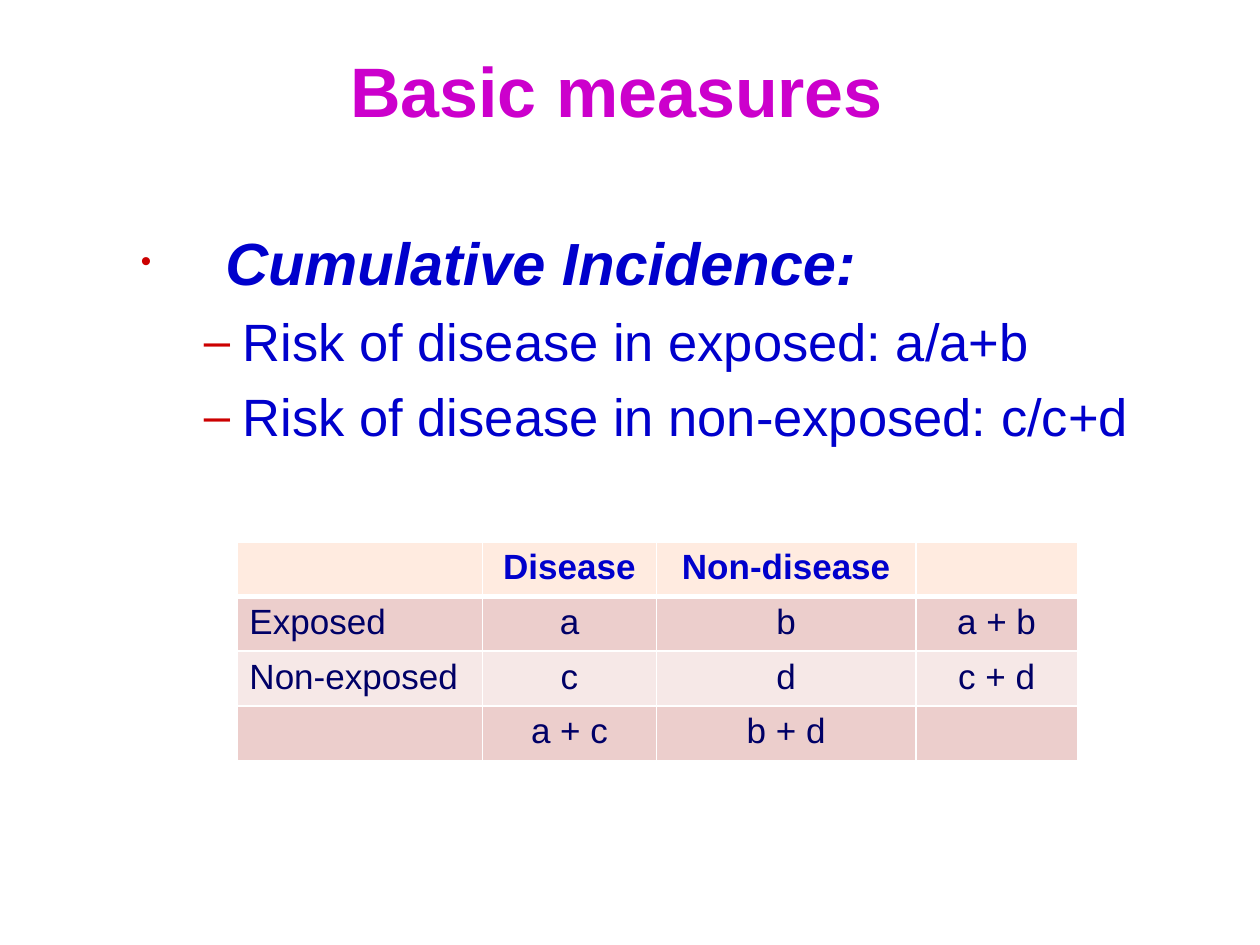
from lxml.etree import SubElement
from pptx import Presentation
from pptx.dml.color import RGBColor
from pptx.enum.text import MSO_ANCHOR, PP_ALIGN
from pptx.oxml.ns import qn
from pptx.util import Inches, Pt


def style(para, size, color, bold=False, italic=False):
    for run in para.runs:
        font = run.font
        font.name, font.size = "Arial", Pt(size)
        font.bold, font.italic = bold, italic
        font.color.rgb = RGBColor.from_string(color)


def add_node(parent, tag, **attrs):
    return SubElement(parent, qn(tag), {k: str(v) for k, v in attrs.items()})


deck = Presentation()
deck.slide_width, deck.slide_height = Inches(10), Inches(7.5)
slide = deck.slides.add_slide(deck.slide_layouts[6])
shapes = slide.shapes

# Title: the closing line break lifts the words above the middle
box = shapes.add_textbox(Inches(0.47), Inches(0.61), Inches(9), Inches(0.87))
frame = box.text_frame
frame.word_wrap = True
frame.vertical_anchor = MSO_ANCHOR.MIDDLE
frame.text = "Basic measures \v"
title = frame.paragraphs[0]
title.alignment = PP_ALIGN.CENTER
style(title, 40, "CC00CC", bold=True)
add_node(title._p, "a:endParaRPr", sz=4000)

# Bulleted list
box = shapes.add_textbox(Inches(1.02), Inches(1.69), Inches(8.47), Inches(5.19))
frame = box.text_frame
frame.word_wrap = True
frame.margin_top = Inches(0.1)
points = [
    ("Cumulative Incidence:", 0, 34),
    ("Risk of disease in exposed: a/a+b", 1, 30),
    ("Risk of disease in non-exposed: c/c+d", 1, 30),
]
levels = [("•", 50, 0.67, -0.67), ("–", 90, 0.81, -0.31)]
frame.text = "\n".join(text for text, _, _ in points)
for para, (_, level, size) in zip(frame.paragraphs, points):
    mark, scale, left, hang = levels[level]
    para.level = level
    props = para._p.get_or_add_pPr()
    props.set("marL", str(Inches(left)))
    props.set("indent", str(Inches(hang)))
    add_node(add_node(props, "a:buClr"), "a:srgbClr", val="CC0000")
    add_node(props, "a:buSzPct", val=scale * 1000)
    add_node(props, "a:buFont", typeface="Arial")
    add_node(props, "a:buChar", char=mark)
    if level:
        para.space_before = Pt(7)
    style(para, size, "0000CC", bold=not level, italic=not level)

# Two-by-two table with totals
rows = [
    ["", "Disease", "Non-disease", ""],
    ["Exposed", "a", "b", "a + b"],
    ["Non-exposed", "c", "d", "c + d"],
    ["", "a + c", "b + d", ""],
]
fills = ["FFEBE0", "ECCECC", "F6E8E7", "ECCECC"]
widths = [1.95, 1.38, 2.06, 1.28]
table = shapes.add_table(4, 4, Inches(1.88), Inches(4.3),
                         Inches(sum(widths)), Inches(1.72)).table
for col, width in zip(table.columns, widths):
    col.width = Inches(width)
for r, texts in enumerate(rows):
    table.rows[r].height = Inches(0.43)
    for c, text in enumerate(texts):
        cell = table.cell(r, c)
        props = cell._tc.get_or_add_tcPr()
        for side in "LRTB":
            thick = (r, side) in [(0, "B"), (1, "T")]
            line = add_node(props, f"a:ln{side}", w=Pt(3 if thick else 1))
            add_node(add_node(line, "a:solidFill"), "a:srgbClr", val="FFFFFF")
        cell.fill.solid()
        cell.fill.fore_color.rgb = RGBColor.from_string(fills[r])
        cell.text = text
        para = cell.text_frame.paragraphs[0]
        para.alignment = PP_ALIGN.CENTER if c else PP_ALIGN.LEFT
        style(para, 20, "000066" if r else "0000CC", bold=not r)

deck.save("out.pptx")
